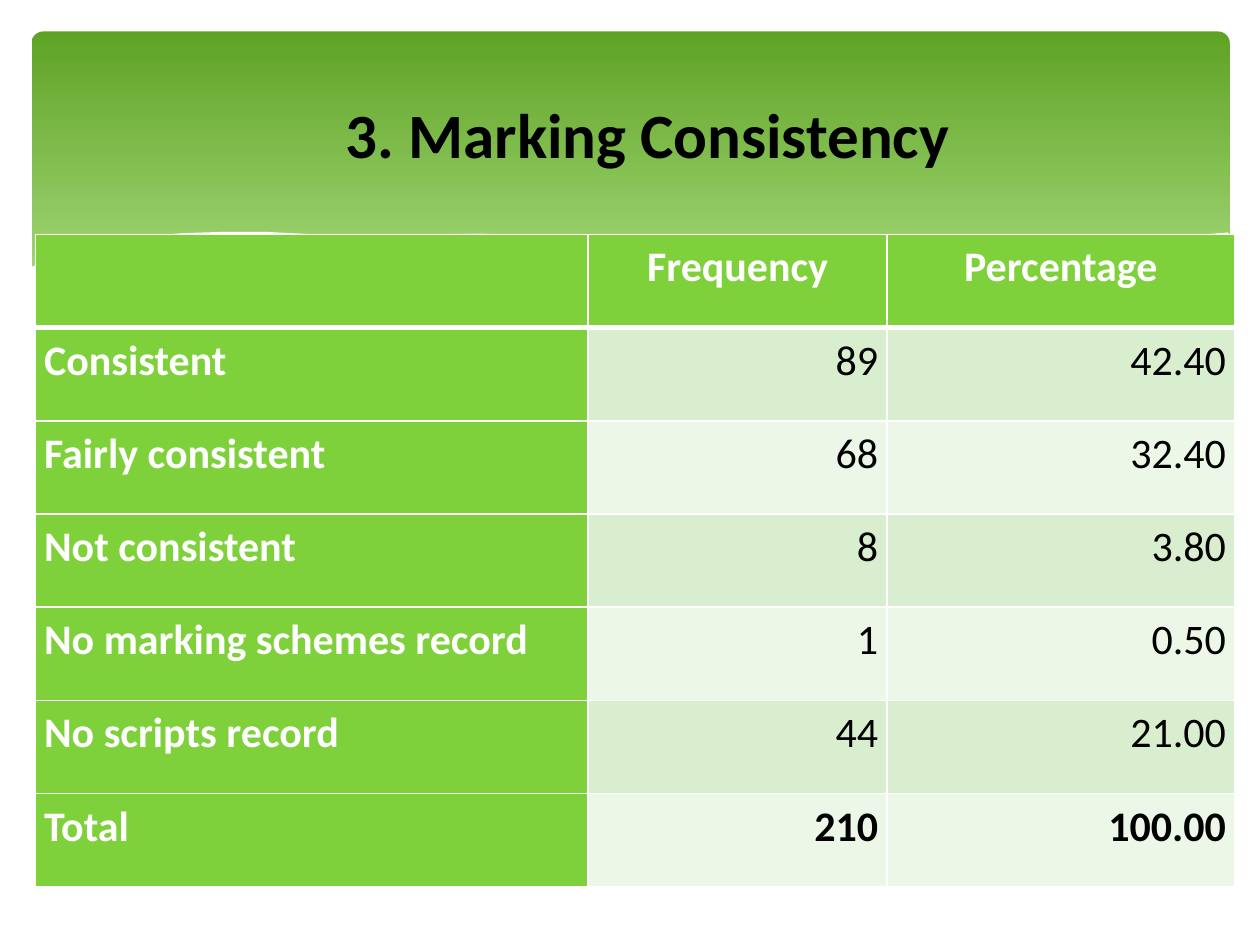
from lxml import etree
from pptx import Presentation, util as u
from pptx.dml.color import RGBColor
from pptx.enum import shapes, text
from pptx.oxml.ns import qn

FONT = "Calibri"
WHITE, BLACK, GREEN = "FFFFFF", "000000", "7FD13B"
BANDS = ("D8EECE", "ECF7E8")
WAVE_UNIT = u.Inches(0.01)

# Wave outlines in hundredths of an inch from the banner's top left corner:
# points, fill, opacity in percent, closed
WAVES = [
    ([(950, 175), (923, 179), (896, 185), (866, 191), (836, 198), (780, 212),
      (728, 223), (681, 232), (636, 240), (666, 244), (694, 247), (720, 250),
      (744, 252), (778, 253), (810, 252), (838, 250), (864, 247), (888, 242),
      (910, 237), (924, 232), (938, 227), (951, 222), (951, 175)],
     "D6ECFF", 29, True),
    ([(868, 248), (841, 244), (782, 235), (716, 222), (643, 206), (573, 189),
      (530, 180), (489, 173), (440, 166), (395, 162), (355, 160), (319, 161),
      (288, 163), (261, 166), (298, 171), (337, 178), (379, 186), (424, 197),
      (505, 215), (576, 230), (625, 239), (670, 245), (711, 250), (748, 252),
      (782, 253), (813, 253), (842, 251), (868, 248)],
     "D6ECFF", 40, True),
    ([(284, 170), (303, 167), (328, 164), (362, 162), (408, 162), (444, 164),
      (485, 167), (531, 172), (583, 179), (640, 188), (702, 201), (770, 216),
      (844, 236), (882, 247)], None, None, False),
    ([(588, 232), (628, 221), (670, 210), (723, 198), (781, 185), (841, 174),
      (885, 167), (926, 162), (950, 160)], None, None, False),
    ([(952, 221), (934, 228), (915, 234), (895, 240), (874, 244), (850, 248),
      (825, 250), (798, 252), (768, 251), (736, 250), (701, 247), (663, 243),
      (623, 237), (578, 229), (530, 220), (478, 208), (422, 195), (366, 182),
      (315, 172), (267, 165), (225, 161), (186, 159), (152, 159), (121, 160),
      (94, 162), (70, 166), (51, 170), (34, 174), (21, 178), (11, 182),
      (4, 185), (-2, 188), (-2, 304), (952, 304)],
     WHITE, 100, True),
]

ROWS = [
    ("", "Frequency", "Percentage"),
    ("Consistent", "89", "42.40"),
    ("Fairly consistent", "68", "32.40"),
    ("Not consistent", "8", "3.80"),
    ("No marking schemes record", "1", "0.50"),
    ("No scripts record", "44", "21.00"),
    ("Total", "210", "100.00"),
]
COLUMN_SHARES = (0.461, 0.249, 0.29)


def rgb(value):
    return RGBColor.from_string(value)


def add_run(p, words, size, color, bold):
    r = p.add_run()
    r.text = words
    r.font.name, r.font.size, r.font.bold = FONT, u.Pt(size), bold
    r.font.color.rgb = rgb(color)


def add_wave(s, left, top, points, fill, opacity, closed):
    builder = s.shapes.build_freeform(*points[0], scale=WAVE_UNIT)
    builder.add_line_segments(points[1:], close=closed)
    sp = builder.convert_to_shape(left, top)
    sp.shadow.inherit = False
    if fill is None:
        sp.fill.background()
        sp.line.color.rgb = rgb(WHITE)
        sp.line.width = 0
        return
    sp.fill.solid()
    sp.fill.fore_color.rgb = rgb(fill)
    sp.line.fill.background()
    if opacity < 100:
        color = sp.fill._xPr.find(qn("a:solidFill"))[0]
        etree.SubElement(color, qn("a:alpha"), val=str(opacity * 1000))


def add_banner(s, left, top, width, height):
    sp = s.shapes.add_shape(shapes.MSO_SHAPE.ROUNDED_RECTANGLE,
                            left, top, width, height)
    sp.adjustments[0] = 0.034
    sp.shadow.inherit = False
    sp.line.fill.background()
    sp.fill.gradient()
    sp.fill.gradient_angle = 270
    for stop, position, color in zip(sp.fill.gradient_stops, (0, 0.9),
                                     ("5FA326", "B2E389")):
        stop.position = position
        stop.color.rgb = rgb(color)
    for wave in WAVES:
        add_wave(s, left, top, *wave)


def add_title(s, left, top, width, height, words):
    tf = s.shapes.add_textbox(left, top, width, height).text_frame
    tf.word_wrap = True
    tf.vertical_anchor = text.MSO_ANCHOR.MIDDLE
    p = tf.paragraphs[0]
    p.alignment = text.PP_ALIGN.CENTER
    add_run(p, words, 36, BLACK, True)


def set_borders(cell, bottom):
    """Draw white cell borders, with the given bottom width in points."""
    props = cell._tc.get_or_add_tcPr()
    for i, (side, width) in enumerate(
            (("lnL", 1), ("lnR", 1), ("lnT", 1), ("lnB", bottom))):
        ln = etree.Element(qn("a:" + side), w=str(u.Pt(width)))
        fill = etree.SubElement(ln, qn("a:solidFill"))
        etree.SubElement(fill, qn("a:srgbClr"), val=WHITE)
        props.insert(i, ln)


def fill_cell(cell, words, row, col):
    heading = row == 0 or col == 0
    cell.fill.solid()
    cell.fill.fore_color.rgb = rgb(GREEN if heading else BANDS[(row - 1) % 2])
    set_borders(cell, 3 if row == 0 else 1)
    cell.margin_left = cell.margin_right = u.Inches(0.07)
    cell.margin_top = cell.margin_bottom = 0
    p = cell.text_frame.paragraphs[0]
    p.line_spacing = 1.15
    if row == 0:
        p.alignment = text.PP_ALIGN.CENTER
    else:
        p.alignment = text.PP_ALIGN.RIGHT if col else text.PP_ALIGN.LEFT
    if words:
        add_run(p, words, 24, WHITE if heading else BLACK,
                heading or row == len(ROWS) - 1)


def add_results_table(s, left, top, width, height):
    table = s.shapes.add_table(len(ROWS), len(COLUMN_SHARES),
                               left, top, width, height).table
    for column, share in zip(table.columns, COLUMN_SHARES):
        column.width = int(width * share)
    for i, row in enumerate(ROWS):
        for j, words in enumerate(row):
            fill_cell(table.cell(i, j), words, i, j)


def main():
    prs = Presentation()
    prs.slide_width, prs.slide_height = u.Inches(10), u.Inches(7.5)
    s = prs.slides.add_slide(prs.slide_layouts[6])

    def box(*inches):
        return [u.Inches(n) for n in inches]

    add_banner(s, *box(0.25, 0.25, 9.51, 2.7))
    add_results_table(s, *box(0.28, 1.86, 9.52, 5.18))
    add_title(s, *box(0.28, 0.37, 9.72, 1.37), "3. Marking Consistency")
    prs.save("out.pptx")


if __name__ == "__main__":
    main()
